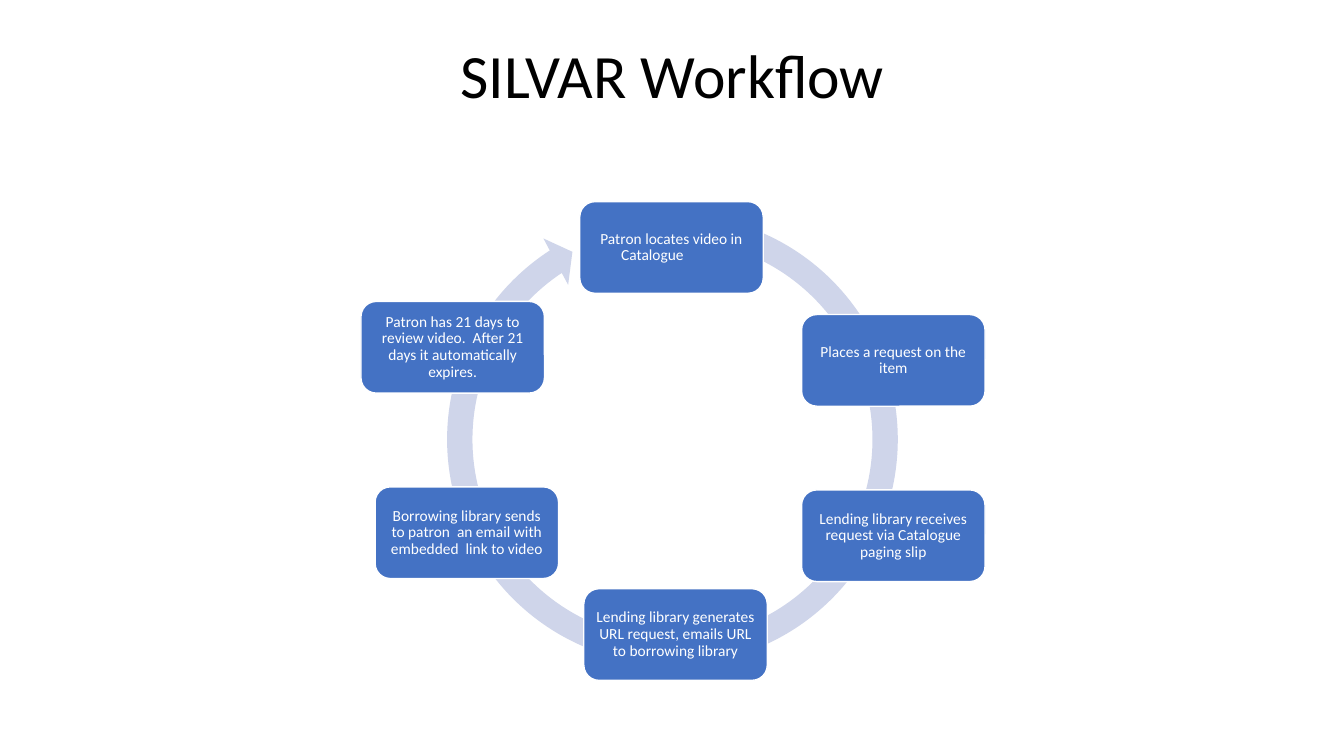
from pptx import Presentation
from pptx.dml.color import RGBColor
from pptx.enum import shapes, text
from pptx.util import Inches, Pt

TITLE = "SILVAR Workflow"
# left, top, wording, clockwise from the top
STEPS = [
    (5.75, 2.00, "Patron locates video in Catalogue\t"),
    (7.95, 3.12, "Places a request on the item"),
    (7.95, 4.86, "Lending library receives request via Catalogue paging slip"),
    (5.79, 5.84, "Lending library generates URL request, emails URL to borrowing library"),
    (3.72, 4.83, "Borrowing library sends to patron  an email with embedded  link to video"),
    (3.58, 2.99, "Patron has 21 days to review video.  After 21 days it automatically expires."),
]
STEP_SIZE = (1.82, 0.91)
RING = (4.3, 1.99, 4.74, 4.74)
RING_ADJUSTMENTS = (0.053, 3.126, 142.039, 171.412, 0.055)

BLACK = RGBColor(0x00, 0x00, 0x00)
WHITE = RGBColor(0xFF, 0xFF, 0xFF)
BLUE = RGBColor(0x44, 0x72, 0xC4)
PALE_BLUE = RGBColor(0xCF, 0xD5, 0xEA)


def write(tf, wording, size, color, anchor):
    tf.word_wrap = True
    tf.vertical_anchor = anchor
    p = tf.paragraphs[0]
    p.text = wording
    p.alignment = text.PP_ALIGN.CENTER
    p.line_spacing = 0.9
    p.font.name = "Calibri"
    p.font.size = Pt(size)
    p.font.color.rgb = color


def add_filled(s, kind, box, color):
    sp = s.shapes.add_shape(kind, *map(Inches, box))
    sp.shadow.inherit = False
    sp.fill.solid()
    sp.fill.fore_color.rgb = color
    return sp


def main():
    prs = Presentation()
    prs.slide_width, prs.slide_height = Inches(13.33), Inches(7.5)
    s = prs.slides.add_slide(prs.slide_layouts[6])

    title = s.shapes.add_textbox(*map(Inches, (0.92, 0.4, 11.5, 1.45)))
    write(title.text_frame, TITLE, 44, BLACK, text.MSO_ANCHOR.TOP)

    ring = add_filled(s, shapes.MSO_SHAPE.CIRCULAR_ARROW, RING, PALE_BLUE)
    ring.line.fill.background()
    for i, value in enumerate(RING_ADJUSTMENTS):
        ring.adjustments[i] = value

    for left, top, wording in STEPS:
        sp = add_filled(s, shapes.MSO_SHAPE.ROUNDED_RECTANGLE,
                        (left, top, *STEP_SIZE), BLUE)
        sp.line.color.rgb = WHITE
        sp.line.width = Pt(1)
        tf = sp.text_frame
        tf.margin_left = tf.margin_right = Inches(0.05)
        tf.margin_top = tf.margin_bottom = Inches(0.05)
        write(tf, wording, 11, WHITE, text.MSO_ANCHOR.MIDDLE)

    prs.save("out.pptx")


if __name__ == "__main__":
    main()
